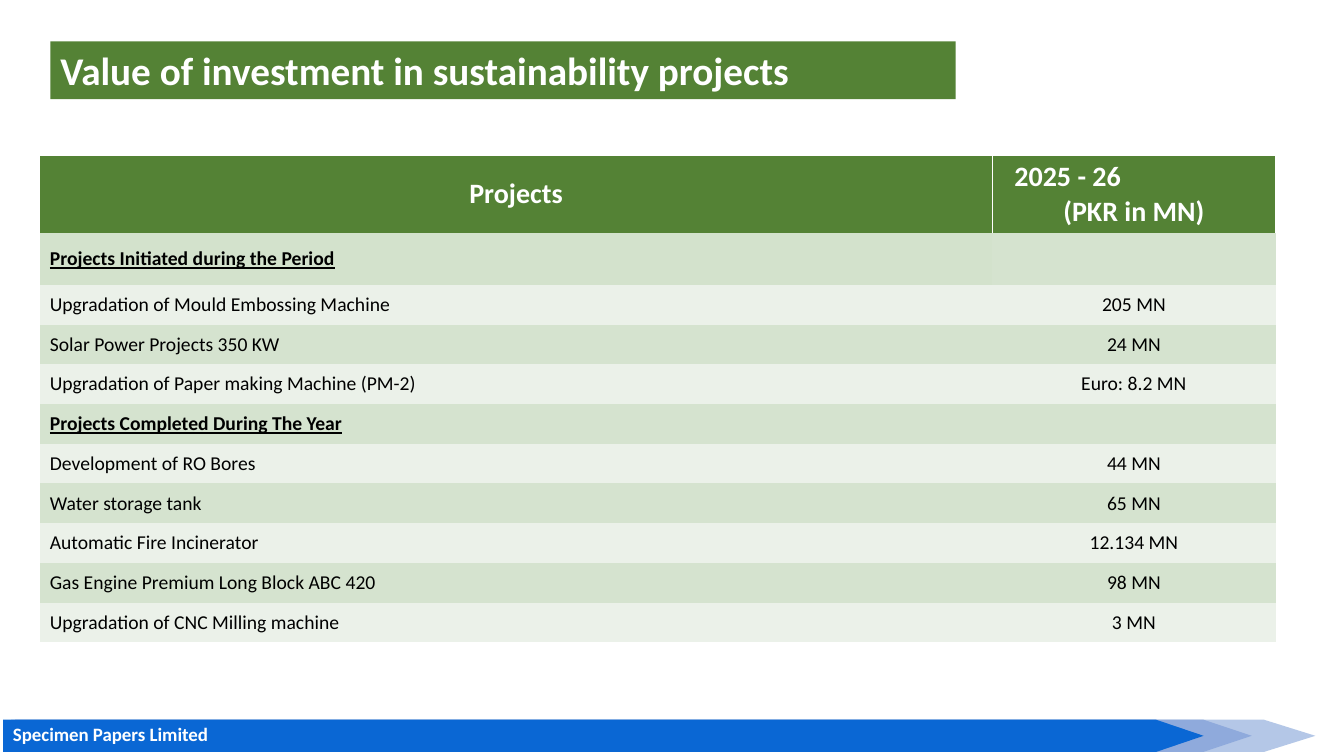
from pptx import Presentation
from pptx.dml.color import RGBColor
from pptx.enum.shapes import MSO_SHAPE as Shape
from pptx.enum.text import MSO_ANCHOR as Anchor, PP_ALIGN as Align
from pptx.oxml import parse_xml
from pptx.oxml.ns import nsdecls
from pptx.util import Pt

GREEN, WHITE, BLACK = "548235", "FFFFFF", "000000"
BANDS = ["D5E3CF", "EBF1E9"]
NO_STYLE = "{2D5ABB26-0587-4C30-8999-92F81FD0307C}"
HEADER = {"size": Pt(20), "bold": True}
SECTION = {"size": Pt(14), "bold": True, "underline": True}
PROJECT = {"size": Pt(14), "bold": False}
COLUMN_WIDTHS = [680.4, 202.3]
ROW_HEIGHTS = [55.2, 37.1] + [28.4] * 9
PROJECTS = [
    ("Projects Initiated during the Period", ""),
    ("Upgradation of Mould Embossing Machine", "205 MN"),
    ("Solar Power Projects 350 KW", "24 MN"),
    ("Upgradation of Paper making Machine (PM-2)", "Euro: 8.2 MN"),
    ("Projects Completed During The Year", ""),
    ("Development of RO Bores", "44 MN"),
    ("Water storage tank", "65 MN"),
    ("Automatic Fire Incinerator", "12.134 MN"),
    ("Gas Engine Premium Long Block ABC 420", "98 MN"),
    ("Upgradation of CNC Milling machine", "3 MN"),
]
ARROWS = [
    (7.9, 902.9, 939.6, "B4C7E7"),
    (10.8, 859.7, 894.2, "8FAADC"),
    (2.2, 825.8, 859.7, "0A67D4"),
]


def color(value):
    """Turn a hex string into a colour."""
    return RGBColor.from_string(value)


def paint(shape, fill):
    """Give a shape a flat fill without line or shadow."""
    shape.shadow.inherit = False
    shape.fill.solid()
    shape.fill.fore_color.rgb = color(fill)
    shape.line.fill.background()


def write(paragraph, text, style, text_color=WHITE, align=Align.LEFT):
    """Write one formatted run into a paragraph."""
    paragraph.alignment = align
    run = paragraph.add_run()
    run.text = text
    for name, value in {"name": "Calibri", **style}.items():
        setattr(run.font, name, value)
    run.font.color.rgb = color(text_color)


def add_arrow(slide, left, shoulder, tip, fill):
    """Draw one pointed footer band."""
    top, middle, bottom = 514.1, 525.6, 537.1
    builder = slide.shapes.build_freeform(Pt(left), Pt(top))
    corners = [(shoulder, top), (tip, middle), (shoulder, bottom), (left, bottom)]
    builder.add_line_segments([(Pt(x), Pt(y)) for x, y in corners])
    paint(builder.convert_to_shape(), fill)


def add_footer_name(slide):
    """Put the company name on the footer band."""
    box = slide.shapes.add_textbox(Pt(2.2), Pt(512.6), Pt(341.3), Pt(23.8))
    box.text_frame.word_wrap = True
    write(box.text_frame.paragraphs[0], "Specimen Papers Limited",
          {"size": Pt(13.5), "bold": True})


def add_title(slide):
    """Draw the green title bar."""
    bar = slide.shapes.add_shape(Shape.RECTANGLE, Pt(36), Pt(29.6), Pt(646.6), Pt(41.2))
    paint(bar, GREEN)
    bar.text_frame.word_wrap = True
    bar.text_frame.vertical_anchor = Anchor.MIDDLE
    write(bar.text_frame.paragraphs[0], "Value of investment in sustainability projects",
          {"size": Pt(28), "bold": True})


def add_borders(cell):
    """Give a header cell thin white side and top borders."""
    properties = cell._tc.get_or_add_tcPr()
    for side in ("lnL", "lnR", "lnT"):
        properties.append(parse_xml(
            f'<a:{side} {nsdecls("a")} w="{Pt(1)}"><a:solidFill>'
            f'<a:srgbClr val="{WHITE}"/></a:solidFill></a:{side}>'))


def fill_cell(cell, fill):
    """Fill a cell and centre its text vertically."""
    cell.margin_top = cell.margin_bottom = 0
    cell.vertical_anchor = Anchor.MIDDLE
    cell.fill.solid()
    cell.fill.fore_color.rgb = color(fill)


def add_header(table):
    """Write the header row."""
    projects, amounts = table.cell(0, 0), table.cell(0, 1)
    for cell in (projects, amounts):
        add_borders(cell)
        fill_cell(cell, GREEN)
    write(projects.text_frame.paragraphs[0], "Projects", HEADER, align=Align.CENTER)
    year = amounts.text_frame.paragraphs[0]
    write(year, "2025 - 26", HEADER)
    year._p.get_or_add_pPr().set("marL", str(Pt(8.6)))
    write(amounts.text_frame.add_paragraph(), "(PKR in MN)", HEADER, align=Align.CENTER)


def add_project_table(slide):
    """Build the table of projects and amounts."""
    frame = slide.shapes.add_table(len(ROW_HEIGHTS), len(COLUMN_WIDTHS), Pt(28.4), Pt(111.2),
                                   Pt(sum(COLUMN_WIDTHS)), Pt(sum(ROW_HEIGHTS)))
    table = frame.table
    table.first_row = table.horz_banding = False
    table._tbl.tblPr.find("{*}tableStyleId").text = NO_STYLE
    for column, width in zip(table.columns, COLUMN_WIDTHS):
        column.width = Pt(width)
    for row, height in zip(table.rows, ROW_HEIGHTS):
        row.height = Pt(height)
    add_header(table)
    for index, (project, amount) in enumerate(PROJECTS):
        name_cell, amount_cell = table.cell(index + 1, 0), table.cell(index + 1, 1)
        for cell in (name_cell, amount_cell):
            fill_cell(cell, BANDS[index % 2])
        write(name_cell.text_frame.paragraphs[0], project,
              PROJECT if amount else SECTION, BLACK)
        if amount:
            write(amount_cell.text_frame.paragraphs[0], amount, PROJECT, BLACK, Align.CENTER)
    table.cell(1, 0).fill.fore_color.rgb = color("D3E2CC")


def main():
    """Build and save the slide."""
    presentation = Presentation()
    presentation.slide_width, presentation.slide_height = Pt(960), Pt(540)
    slide = presentation.slides.add_slide(presentation.slide_layouts[6])
    for arrow in ARROWS:
        add_arrow(slide, *arrow)
    add_footer_name(slide)
    add_project_table(slide)
    add_title(slide)
    presentation.save("out.pptx")


if __name__ == "__main__":
    main()
